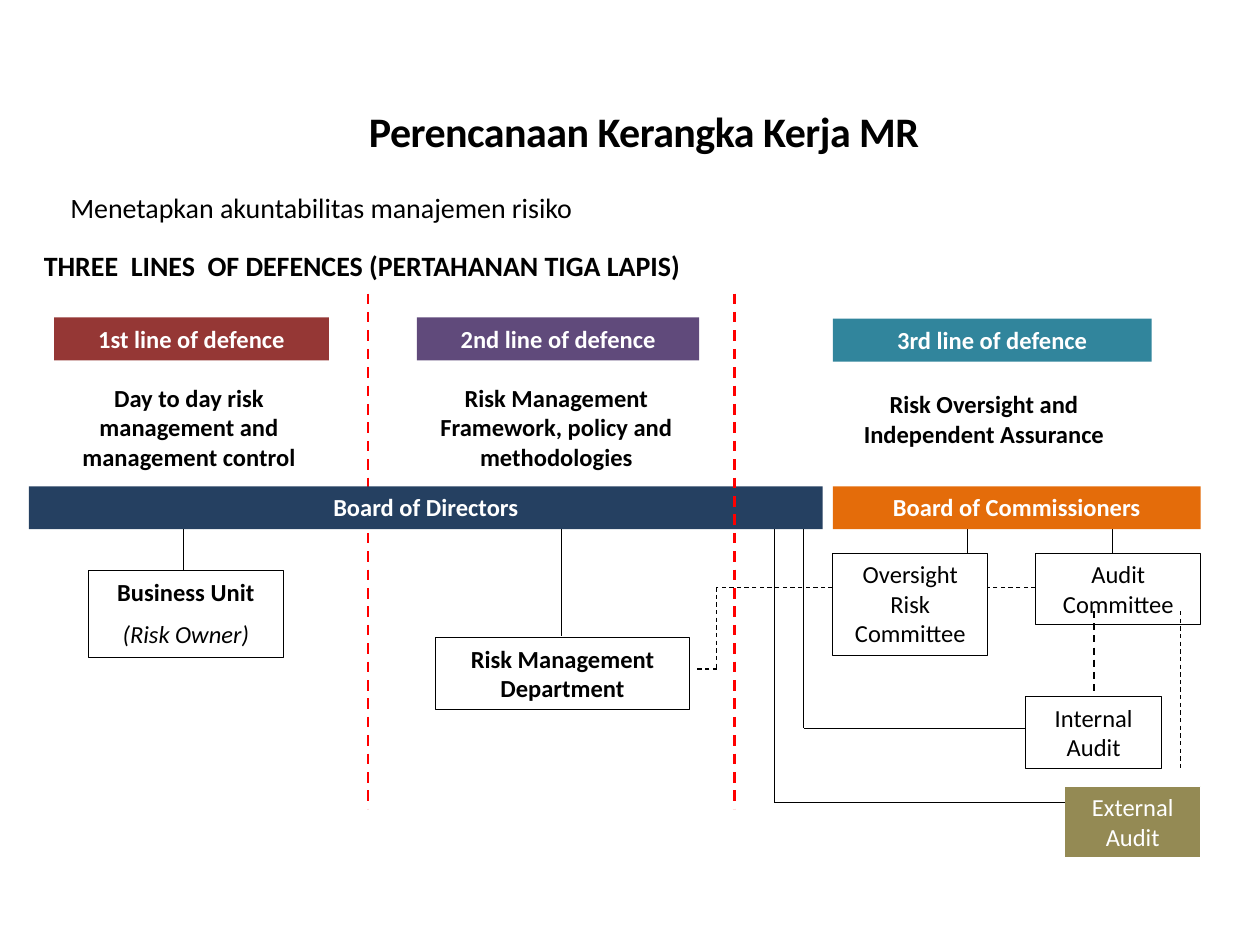
from itertools import pairwise

from lxml import etree
from pptx import Presentation
from pptx.dml.color import RGBColor
from pptx.enum.dml import MSO_LINE
from pptx.enum.shapes import MSO_CONNECTOR, MSO_SHAPE
from pptx.enum.text import MSO_ANCHOR, PP_ALIGN
from pptx.oxml.ns import qn
from pptx.util import Inches, Pt

RECTANGLE = MSO_SHAPE.RECTANGLE
STRAIGHT = MSO_CONNECTOR.STRAIGHT
DASH = MSO_LINE.DASH
TOP, MIDDLE = MSO_ANCHOR.TOP, MSO_ANCHOR.MIDDLE
LEFT, CENTER = PP_ALIGN.LEFT, PP_ALIGN.CENTER

BLACK = RGBColor(0x00, 0x00, 0x00)
WHITE = RGBColor(0xFF, 0xFF, 0xFF)
RED = RGBColor(0xFF, 0x00, 0x00)
MAROON = RGBColor(0x95, 0x37, 0x35)
PURPLE = RGBColor(0x60, 0x4A, 0x7B)
TEAL = RGBColor(0x31, 0x85, 0x9C)
NAVY = RGBColor(0x25, 0x40, 0x61)
ORANGE = RGBColor(0xE4, 0x6C, 0x0A)
OLIVE = RGBColor(0x94, 0x8A, 0x54)

FONT = "Calibri"
THIN = 0.63
BAR_HEIGHT = 0.34


def inches(*lengths):
    return [Inches(length) for length in lengths]


def write(para, text, size=14, color=BLACK, bold=False, italic=False,
          align=CENTER, before=0, spacing=None):
    para.alignment = align
    para.space_before = Pt(before)
    span = para.add_run()
    span.text = text
    span.font.name = FONT
    span.font.size = Pt(size)
    span.font.bold = bold
    span.font.italic = italic
    span.font.color.rgb = color
    if spacing is not None:
        span._r.get_or_add_rPr().set("spc", str(spacing))


def add_label(page, left, top, width, height, text, **style):
    box = page.shapes.add_textbox(*inches(left, top, width, height))
    box.text_frame.word_wrap = True
    write(box.text_frame.paragraphs[0], text, **style)


def add_box(page, left, top, width, height, text, fill=None, outline=None, **style):
    box = page.shapes.add_shape(RECTANGLE, *inches(left, top, width, height))
    box.shadow.inherit = False
    if fill is None:
        box.fill.background()
    else:
        box.fill.solid()
        box.fill.fore_color.rgb = fill
    if outline is None:
        box.line.fill.background()
    else:
        box.line.color.rgb = outline
        box.line.width = Pt(THIN)
    frame = box.text_frame
    frame.word_wrap = True
    frame.vertical_anchor = TOP
    write(frame.paragraphs[0], text, **style)
    return frame


def add_route(page, left, top, points, color=BLACK, width=THIN, dashed=False):
    for (x1, y1), (x2, y2) in pairwise(points):
        link = page.shapes.add_connector(
            STRAIGHT, *inches(left + x1, top + y1, left + x2, top + y2))
        link.line.color.rgb = color
        link.line.width = Pt(width)
        if dashed:
            link.line.dash_style = DASH
        etree.SubElement(link.element.spPr, qn("a:effectLst"))


def add_divider(page, left, top, height):
    add_route(page, left, top, [(0, 0), (0, height)], color=RED, width=1.5, dashed=True)


def add_title(page, left, top, width, height):
    title = page.shapes.title
    title.left, title.top, title.width, title.height = inches(left, top, width, height)
    title.text_frame.vertical_anchor = MIDDLE
    write(title.text_frame.paragraphs[0], "Perencanaan Kerangka Kerja MR",
          size=24, bold=True, spacing=-30)


def add_introduction(page, left, top):
    add_label(page, left + 0.21, top, 9.12, 0.37,
              "Menetapkan akuntabilitas manajemen risiko", size=16, align=LEFT)
    add_label(page, left, top + 0.46, 5.57, 0.37,
              "THREE  LINES  OF DEFENCES (PERTAHANAN TIGA LAPIS)",
              size=16, bold=True, align=LEFT)


def add_defence_line(page, left, top, width, heading, color, duty, duty_box):
    add_box(page, left, top, width, BAR_HEIGHT, heading, fill=color,
            color=WHITE, bold=True)
    shift, drop, duty_width, duty_height = duty_box
    add_label(page, left + shift, top + drop, duty_width, duty_height, duty, bold=True)


def add_boards(page, left, top):
    boards = [
        (0, 6.3, "Board of Directors", NAVY),
        (6.38, 2.92, "Board of Commissioners", ORANGE),
    ]
    for x, width, name, fill in boards:
        add_box(page, left + x, top, width, BAR_HEIGHT, name, fill=fill,
                color=WHITE, bold=True)


def add_units(page, left, top):
    business = add_box(page, left + 0.47, top + 0.67, 1.55, 0.69, "Business Unit",
                       outline=BLACK, bold=True)
    write(business.add_paragraph(), "(Risk Owner)", italic=True, before=7)
    add_box(page, left + 3.23, top + 1.2, 2.01, 0.57, "Risk Management Department",
            outline=BLACK, bold=True)
    committees = [
        (6.38, 0.53, 1.23, 0.81, "Oversight Risk Committee"),
        (7.99, 0.53, 1.31, 0.57, "Audit Committee"),
        (7.91, 1.67, 1.08, 0.57, "Internal Audit"),
    ]
    for x, y, width, height, name in committees:
        add_box(page, left + x, top + y, width, height, name, outline=BLACK)
    add_box(page, left + 8.22, top + 2.38, 1.08, 0.57, "External Audit",
            fill=OLIVE, outline=WHITE, color=WHITE)


def add_reporting_lines(page, left, top):
    for x, bottom in [(1.23, 0.67), (4.23, 1.19), (7.45, 0.53), (8.6, 0.53)]:
        add_route(page, left, top, [(x, BAR_HEIGHT), (x, bottom)])
    for x, y, end in [(6.15, 1.92, 7.91), (5.92, 2.51, 8.22)]:
        add_route(page, left, top, [(x, BAR_HEIGHT), (x, y), (end, y)])
    dashed_routes = [
        ([(6.38, 0.8), (5.46, 0.8), (5.46, 1.45), (5.3, 1.45)], THIN),
        ([(7.99, 0.8), (7.61, 0.8)], THIN),
        ([(9.14, 0.99), (9.14, 2.24)], THIN),
        ([(8.45, 0.99), (8.45, 1.65)], 1),
    ]
    for points, width in dashed_routes:
        add_route(page, left, top, points, width=width, dashed=True)


def main():
    deck = Presentation()
    deck.slide_width, deck.slide_height = inches(10, 7.5)
    page = deck.slides.add_slide(deck.slide_layouts[5])

    add_divider(page, 2.92, 2.33, 4.09)
    add_title(page, 1.47, 0.5, 7.28, 1.08)
    add_introduction(page, 0.25, 1.46)
    add_units(page, 0.23, 3.86)
    add_reporting_lines(page, 0.23, 3.86)
    add_defence_line(page, 0.43, 2.52, 2.18, "1st line of defence", MAROON,
                     "Day to day risk management and management control",
                     (-0.12, 0.47, 2.38, 0.81))
    add_defence_line(page, 3.31, 2.52, 2.24, "2nd line of defence", PURPLE,
                     "Risk Management Framework, policy and methodologies",
                     (-0.09, 0.47, 2.39, 0.81))
    add_defence_line(page, 6.61, 2.53, 2.53, "3rd line of defence", TEAL,
                     "Risk Oversight and Independent Assurance",
                     (0, 0.51, 2.4, 0.57))
    add_boards(page, 0.23, 3.86)
    add_divider(page, 5.83, 2.33, 4.09)

    deck.save("out.pptx")


if __name__ == "__main__":
    main()
